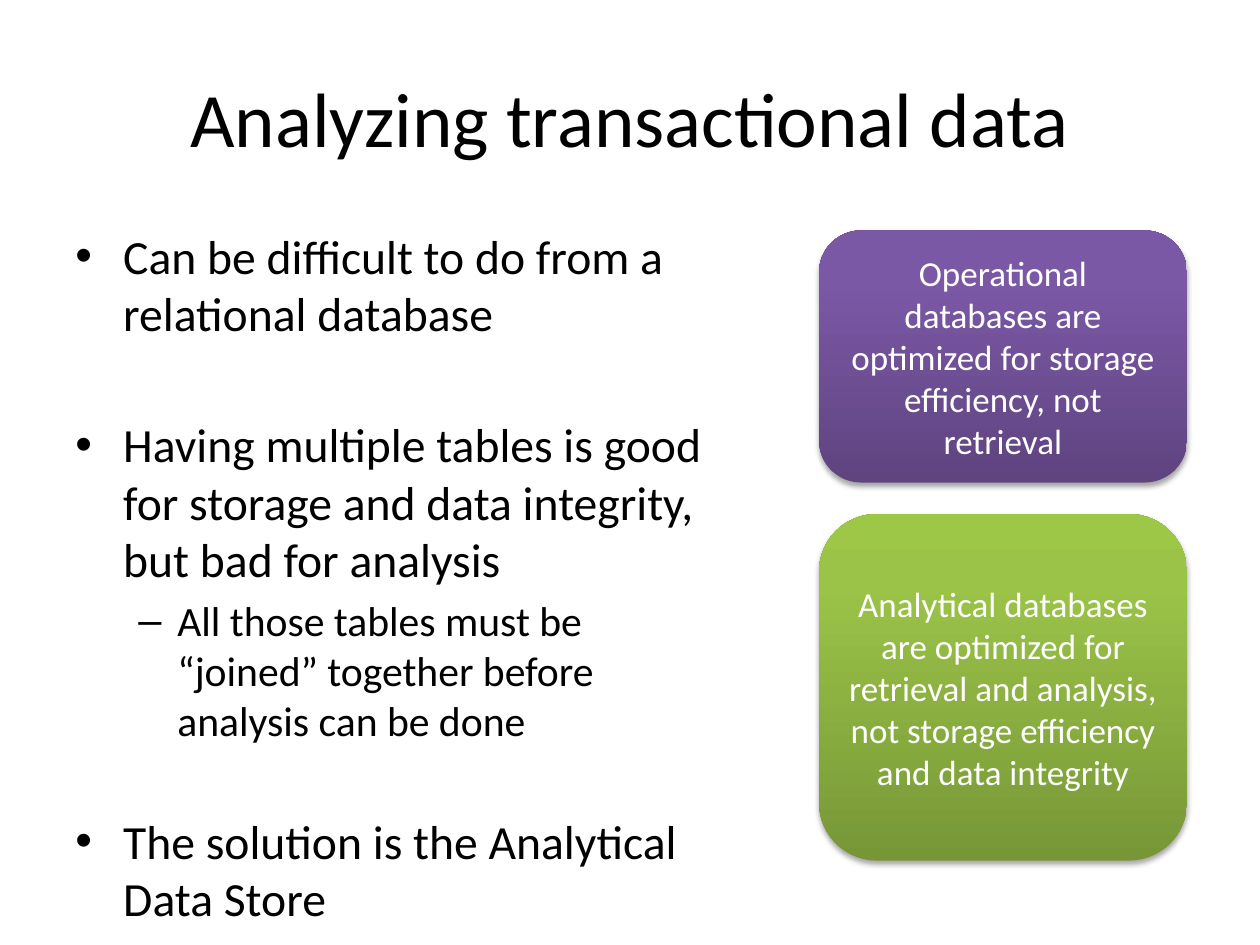
from lxml import etree
from pptx import Presentation
from pptx.dml.color import RGBColor
from pptx.enum.shapes import MSO_SHAPE
from pptx.enum.text import MSO_ANCHOR, PP_ALIGN
from pptx.oxml import parse_xml
from pptx.oxml.ns import nsdecls, qn
from pptx.util import Inches, Pt

ROUNDED = MSO_SHAPE.ROUNDED_RECTANGLE
CENTER, LEFT = PP_ALIGN.CENTER, PP_ALIGN.LEFT
MIDDLE, TOP = MSO_ANCHOR.MIDDLE, MSO_ANCHOR.TOP

FONT = "Calibri"
COLORS = {"text": "000000", "light": "FFFFFF", "shadow": "000000"}
GRADIENTS = {  # bottom to top
    "purple": [(0, "5F4480"), (80, "7B58A6"), (100, "7C57A8")],
    "green": [(0, "779737"), (80, "9BC348"), (100, "9DC746")],
}

TITLE = "Analyzing transactional data"
# level, space before in points, wording
POINTS = [
    (0, 0, "Can be difficult to do from a relational database"),
    (0, 42.5, "Having multiple tables is good for storage and data integrity, "
              "but bad for analysis"),
    (1, 4.8, "All those tables must be “joined” together before analysis can be done"),
    (0, 38, "The solution is the Analytical Data Store"),
]
LEVELS = [
    {"bullet": "•", "size": 27.2, "margin": 0.38, "hanging": 0.38},
    {"bullet": "–", "size": 23.8, "margin": 0.81, "hanging": 0.31},
]
# gradient, height in inches, wording
CARDS = [
    ("purple", 2, "Operational databases are optimized for storage efficiency, "
                  "not retrieval"),
    ("green", 2.75, "Analytical databases are optimized for retrieval and analysis, "
                    "not storage efficiency and data integrity"),
]

WIDTH, HEIGHT, MARGIN = 10, 7.5, 0.5
TITLE_TOP, TITLE_HEIGHT = 0.3, 1.25
BODY_TOP, BODY_WIDTH, BODY_HEIGHT = 1.75, 5.33, 5.33
CARD_LEFT, CARD_TOP, CARD_WIDTH, CARD_GAP = 6.5, 1.83, 2.92, 0.25


def set_frame(shape, anchor):
    frame = shape.text_frame
    frame.word_wrap = True
    frame.vertical_anchor = anchor
    return frame


def write(paragraph, words, size, color, align):
    paragraph.alignment = align
    run = paragraph.add_run()
    run.text = words
    for attribute, value in {"name": FONT, "size": Pt(size)}.items():
        setattr(run.font, attribute, value)
    run.font.color.rgb = RGBColor.from_string(COLORS[color])


def add_bullet(paragraph, bullet, margin, hanging):
    properties = paragraph._p.get_or_add_pPr()
    properties.set("marL", str(Inches(margin)))
    properties.set("indent", str(-Inches(hanging)))
    etree.SubElement(properties, qn("a:buFont"), typeface="Arial")
    etree.SubElement(properties, qn("a:buChar"), char=bullet)


def fill_gradient(shape, stops):
    shape.fill.gradient()
    shape.fill.gradient_angle = 90
    stop_list = shape._element.spPr.find(qn("a:gradFill")).find(qn("a:gsLst"))
    for old_stop in list(stop_list):
        stop_list.remove(old_stop)
    for position, color in stops:
        stop = etree.SubElement(stop_list, qn("a:gs"), pos=str(position * 1000))
        etree.SubElement(stop, qn("a:srgbClr"), val=color)


def add_shadow(shape):
    shape.shadow.inherit = False
    shape._element.spPr.find(qn("a:effectLst")).append(parse_xml(
        f'<a:outerShdw {nsdecls("a")} blurRad="{Pt(3.1)}" dist="{Pt(1.8)}" '
        f'dir="5400000" rotWithShape="0"><a:srgbClr val="{COLORS["shadow"]}">'
        '<a:alpha val="35000"/></a:srgbClr></a:outerShdw>'))


def main():
    deck = Presentation()
    deck.slide_width, deck.slide_height = Inches(WIDTH), Inches(HEIGHT)
    shapes = deck.slides.add_slide(deck.slide_layouts[6]).shapes

    title = shapes.add_textbox(*map(Inches, (
        MARGIN, TITLE_TOP, WIDTH - 2 * MARGIN, TITLE_HEIGHT)))
    write(set_frame(title, MIDDLE).paragraphs[0], TITLE, 44, "text", CENTER)

    body = shapes.add_textbox(*map(Inches, (
        MARGIN, BODY_TOP, BODY_WIDTH, BODY_HEIGHT)))
    frame = set_frame(body, TOP)
    for index, (level, space, words) in enumerate(POINTS):
        paragraph = frame.add_paragraph() if index else frame.paragraphs[0]
        style = LEVELS[level]
        paragraph.level = level
        paragraph.space_before = Pt(space)
        add_bullet(paragraph, style["bullet"], style["margin"], style["hanging"])
        write(paragraph, words, style["size"], "text", LEFT)

    top = CARD_TOP
    for gradient, height, words in CARDS:
        card = shapes.add_shape(ROUNDED, *map(Inches, (
            CARD_LEFT, top, CARD_WIDTH, height)))
        fill_gradient(card, GRADIENTS[gradient])
        card.line.fill.background()
        add_shadow(card)
        write(set_frame(card, MIDDLE).paragraphs[0], words, 20, "light", CENTER)
        top += height + CARD_GAP

    deck.save("out.pptx")


if __name__ == "__main__":
    main()
